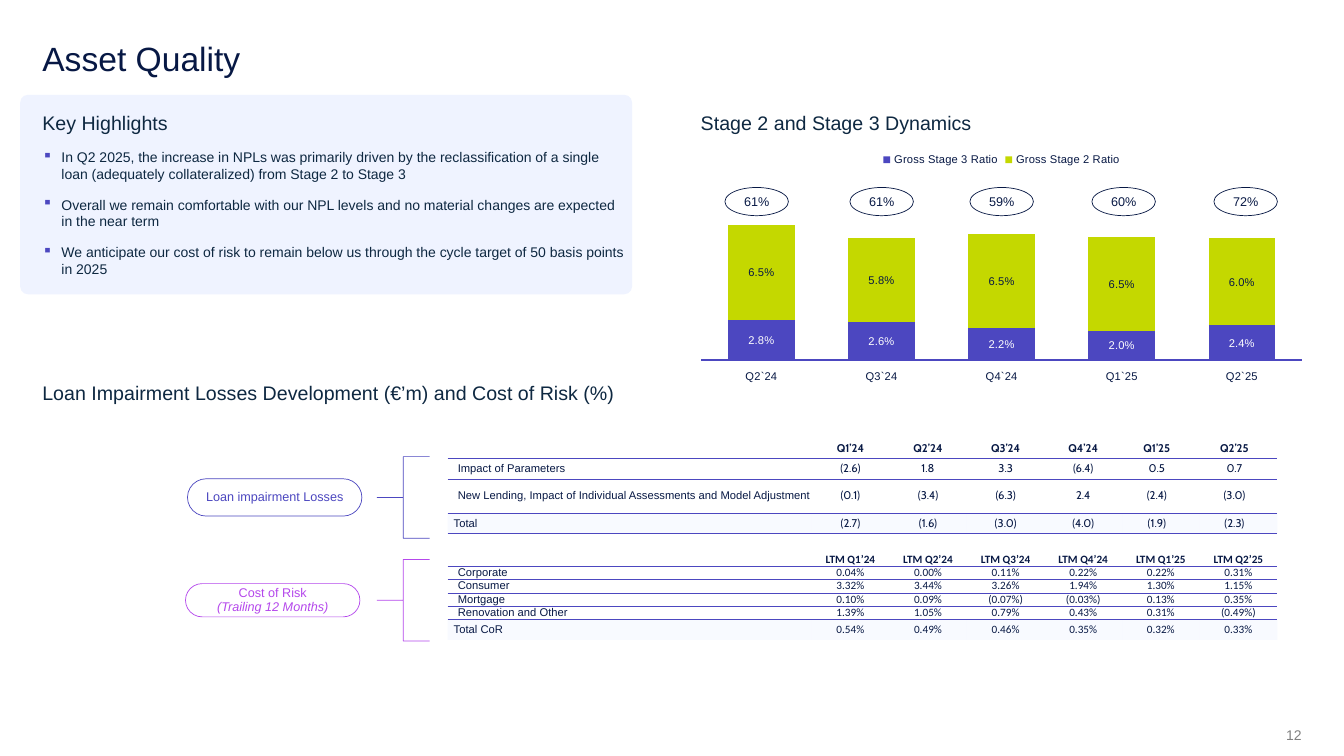
"""Builds the Asset Quality slide with its highlights, stage chart and loss table."""
from lxml import etree
from pptx import Presentation
from pptx.chart.data import CategoryChartData
from pptx.dml.color import RGBColor
from pptx.enum.chart import XL_CHART_TYPE, XL_LEGEND_POSITION, XL_TICK_LABEL_POSITION, XL_TICK_MARK
from pptx.enum.shapes import MSO_SHAPE
from pptx.enum.text import MSO_ANCHOR, PP_ALIGN
from pptx.oxml import parse_xml
from pptx.oxml.ns import nsdecls, qn
from pptx.util import Inches, Pt

NAVY = RGBColor(0x07, 0x18, 0x44)
INK = RGBColor(0x0E, 0x28, 0x41)
BLUE = RGBColor(0x4C, 0x47, 0xC0)
LIME = RGBColor(0xC4, 0xD8, 0x00)
PINK = RGBColor(0xB5, 0x48, 0xEC)
PALE = RGBColor(0xEF, 0xF3, 0xFF)
GRAY = RGBColor(0x80, 0x80, 0x80)
WHITE = RGBColor(0xFF, 0xFF, 0xFF)
LEFT, MID, RIGHT = PP_ALIGN.LEFT, PP_ALIGN.CENTER, PP_ALIGN.RIGHT
CENTER = MSO_ANCHOR.MIDDLE
ROUND, OVAL, BRACE = MSO_SHAPE.ROUNDED_RECTANGLE, MSO_SHAPE.OVAL, MSO_SHAPE.LEFT_BRACE
STACKED = XL_CHART_TYPE.COLUMN_STACKED
TOP = XL_LEGEND_POSITION.TOP
LOW, BARE = XL_TICK_LABEL_POSITION.LOW, XL_TICK_LABEL_POSITION.NONE
NO_TICK = XL_TICK_MARK.NONE

deck = Presentation()
deck.slide_width, deck.slide_height = Inches(13.33), Inches(7.5)
slide = deck.slides.add_slide(deck.slide_layouts[6])
shapes = slide.shapes


def write(frame, text, size=9, color=NAVY, face="Arial", bold=False, italic=False,
          align=LEFT, line=None, before=None, bullet=False, inset=(0, 0, 0, 0), anchor=None):
    """Append one paragraph to a text frame."""
    frame.word_wrap = True
    frame.margin_left, frame.margin_top, frame.margin_right, frame.margin_bottom = map(Inches, inset)
    if anchor is not None:
        frame.vertical_anchor = anchor
    para = frame.paragraphs[0] if not frame.text else frame.add_paragraph()
    para.alignment = align
    if line:
        para.line_spacing = line
    if before:
        para.space_before = Pt(before)
    if bullet:
        props = para._p.get_or_add_pPr()
        props.set("marL", str(Inches(0.19)))
        props.set("indent", str(-Inches(0.19)))
        tint = etree.SubElement(props, qn("a:buClr"))
        etree.SubElement(tint, qn("a:srgbClr"), val=str(BLUE))
        etree.SubElement(props, qn("a:buChar"), char="▪")
    run = para.add_run()
    run.text = text
    font = run.font
    font.size, font.name, font.bold, font.italic = Pt(size), face, bold, italic
    font.color.rgb = color


def draw(kind, box, fill=None, line=None, adjust=()):
    """Add a preset shape without shadow."""
    shape = shapes.add_shape(kind, *map(Inches, box))
    shape.shadow.inherit = False
    for i, value in enumerate(adjust):
        shape.adjustments[i] = value
    if fill is None:
        shape.fill.background()
    else:
        shape.fill.solid()
        shape.fill.fore_color.rgb = fill
    if line is None:
        shape.line.fill.background()
    else:
        shape.line.color.rgb = line
        shape.line.width = Pt(0.5)
    return shape


draw(ROUND, (0.2, 0.94, 6.07, 1.98), fill=PALE, adjust=[0.04])

HEADS = [
    ((0.42, 0.42, 9.58, 0.36), "Asset Quality", dict(size=24, line=0.9)),
    ((0.42, 1.1, 5.77, 1.8), "Key Highlights", dict(size=14, color=INK)),
    ((6.95, 1.1, 5.61, 0.36), "Stage 2 and Stage 3 Dynamics", dict(size=14, color=INK)),
    ((0.42, 3.78, 5.9, 0.36), "Loan Impairment Losses Development (€’m) and Cost of Risk (%)",
     dict(size=14, color=INK)),
    ((9.9, 7.08, 3.01, 0.42), "12", dict(size=10, color=GRAY, align=RIGHT, anchor=CENTER)),
]
frames = []
for box, text, style in HEADS:
    frame = shapes.add_textbox(*map(Inches, box)).text_frame
    write(frame, text, **style)
    frames.append(frame)

for text in (
    "In Q2 2025, the increase in NPLs was primarily driven by the reclassification of a single "
    "loan (adequately collateralized) from Stage 2 to Stage 3",
    "Overall we remain comfortable with our NPL levels and no material changes are expected "
    "in the near term",
    "We anticipate our cost of risk to remain below us through the cycle target of 50 basis "
    "points in 2025",
):
    write(frames[1], text, size=10, color=INK, before=10, bullet=True)

data = CategoryChartData()
data.categories = ["Q2`24", "Q3`24", "Q4`24", "Q1`25", "Q2`25"]
data.add_series("Gross Stage 3 Ratio", [0.028, 0.026, 0.022, 0.02, 0.024])
data.add_series("Gross Stage 2 Ratio", [0.065, 0.058, 0.065, 0.065, 0.06])
chart = shapes.add_chart(STACKED, Inches(6.95), Inches(1.41), Inches(5.97), Inches(2.54), data).chart
chart.font.size, chart.font.name = Pt(8), "Arial"
chart.font.color.rgb = NAVY
chart.has_title = False
chart.has_legend = True
chart.legend.position = TOP
chart.legend.include_in_layout = False
cats, vals = chart.category_axis, chart.value_axis
cats.tick_label_position = LOW
cats.major_tick_mark = vals.major_tick_mark = NO_TICK
cats.format.line.color.rgb = BLUE
cats.format.line.width = Pt(1)
vals.tick_label_position = BARE
vals.has_major_gridlines = False
vals.format.line.fill.background()
vals.minimum_scale, vals.maximum_scale, vals.major_unit = 0, 0.1, 0.01
plot = chart.plots[0]
plot.gap_width, plot.overlap, plot.vary_by_categories = 80, 100, False
for series, fill, ink in zip(plot.series, (BLUE, LIME), (WHITE, NAVY)):
    series.format.fill.solid()
    series.format.fill.fore_color.rgb = fill
    labels = series.data_labels
    labels.show_value = True
    labels.number_format, labels.number_format_is_linked = "0.0%", False
    labels.font.size, labels.font.name = Pt(8), "Arial"
    labels.font.color.rgb = ink
area = chart._chartSpace.chart.plotArea
for old in area.findall(qn("c:layout")):
    area.remove(old)
area.insert(0, parse_xml(
    f'<c:layout {nsdecls("c")}><c:manualLayout><c:layoutTarget val="inner"/>'
    '<c:xMode val="edge"/><c:yMode val="edge"/><c:x val="0"/><c:y val="0.285"/>'
    '<c:w val="1"/><c:h val="0.567"/></c:manualLayout></c:layout>'))

for left, text in zip((7.19, 8.43, 9.62, 10.83, 12.04), ("61%", "61%", "59%", "60%", "72%")):
    oval = draw(OVAL, (left, 1.86, 0.63, 0.28), fill=WHITE, line=NAVY)
    write(oval.text_frame, text, align=MID, anchor=CENTER, inset=(0, 0.05, 0, 0.05))

ROWS = [
    (0.21, ["", "Q1’24", "Q2’24", "Q3’24", "Q4’24", "Q1’25", "Q2’25"]),
    (0.2, ["Impact of Parameters", "(2.6)", "1.8", "3.3", "(6.4)", "0.5", "0.7"]),
    (0.34, ["New Lending, Impact of Individual Assessments and Model Adjustment",
            "(0.1)", "(3.4)", "(6.3)", "2.4", "(2.4)", "(3.0)"]),
    (0.2, ["Total", "(2.7)", "(1.6)", "(3.0)", "(4.0)", "(1.9)", "(2.3)"]),
    (0.19, [""] * 7),
    (0.13, ["", "LTM Q1’24", "LTM Q2’24", "LTM Q3’24", "LTM Q4’24", "LTM Q1’25", "LTM Q2’25"]),
    (0.13, ["Corporate", "0.04%", "0.00%", "0.11%", "0.22%", "0.22%", "0.31%"]),
    (0.13, ["Consumer", "3.32%", "3.44%", "3.26%", "1.94%", "1.30%", "1.15%"]),
    (0.13, ["Mortgage", "0.10%", "0.09%", "(0.07%)", "(0.03%)", "0.13%", "0.35%"]),
    (0.13, ["Renovation and Other", "1.39%", "1.05%", "0.79%", "0.43%", "0.31%", "(0.49%)"]),
    (0.2, ["Total CoR", "0.54%", "0.49%", "0.46%", "0.35%", "0.32%", "0.33%"]),
]
table = shapes.add_table(len(ROWS), 7, Inches(4.44), Inches(4.34), Inches(8.23), Inches(2.01)).table
table.first_row = table.horz_banding = False
table._tbl.tblPr.find(qn("a:tableStyleId")).text = "{2D5ABB26-0587-4C30-8999-92F81FD0307C}"
for c, col in enumerate(table.columns):
    col.width = Inches(0.77 if c else 3.61)
rules = [0 if texts[0].startswith("Total") or not any(texts) else 0.25 for _, texts in ROWS]
rules[0] = 1
for r, (height, texts) in enumerate(ROWS):
    table.rows[r].height = Inches(height)
    total = texts[0].startswith("Total")
    for c, text in enumerate(texts):
        cell = table.cell(r, c)
        pad = 0 if c else 0.06 if total else 0.1
        end = 0.08 if c > 4 and r < 4 else 0
        cell.margin_left, cell.margin_right = Inches(pad), Inches(end)
        cell.margin_top = cell.margin_bottom = 0
        cell.vertical_anchor = CENTER
        if text:
            write(cell.text_frame, text, size=8, bold=r in (0, 5), align=MID if c else LEFT,
                  face="Arial" if c == 0 else "Cabin" if r < 4 else "Calibri", inset=(pad, 0, end, 0))
        else:
            cell.text_frame.paragraphs[0]._p.get_or_add_endParaRPr().set("sz", "800")
        props = cell._tc.get_or_add_tcPr()
        if total:
            cell.fill.solid()
            cell.fill.fore_color.rgb = PALE
            etree.SubElement(props.find(".//" + qn("a:srgbClr")), qn("a:alpha"), val="40000")
        else:
            cell.fill.background()
        edges = [("lnT", rules[r - 1] if r else 0), ("lnB", rules[r])]
        for i, (tag, width) in enumerate(edge for edge in edges if edge[1]):
            props.insert(i, parse_xml(
                f'<a:{tag} {nsdecls("a")} w="{Pt(width)}"><a:solidFill>'
                f'<a:srgbClr val="{BLUE}"/></a:solidFill></a:{tag}>'))

PILLS = [
    ((1.86, 4.75, 1.73, 0.37), BLUE, 4.53, ["Loan impairment Losses"]),
    ((1.84, 5.79, 1.73, 0.33), PINK, 5.55, ["Cost of Risk", "(Trailing 12 Months)"]),
]
for box, color, top, texts in PILLS:
    pill = draw(ROUND, box, line=color, adjust=[0.5])
    for i, text in enumerate(texts):
        write(pill.text_frame, text, color=color, italic=i == 1, align=MID, line=0.9,
              anchor=CENTER, inset=(0.05, 0.05, 0.05, 0.05))
    draw(BRACE, (3.74, top, 0.52, 0.81), line=color, adjust=[0, 0.5])

deck.save("out.pptx")
